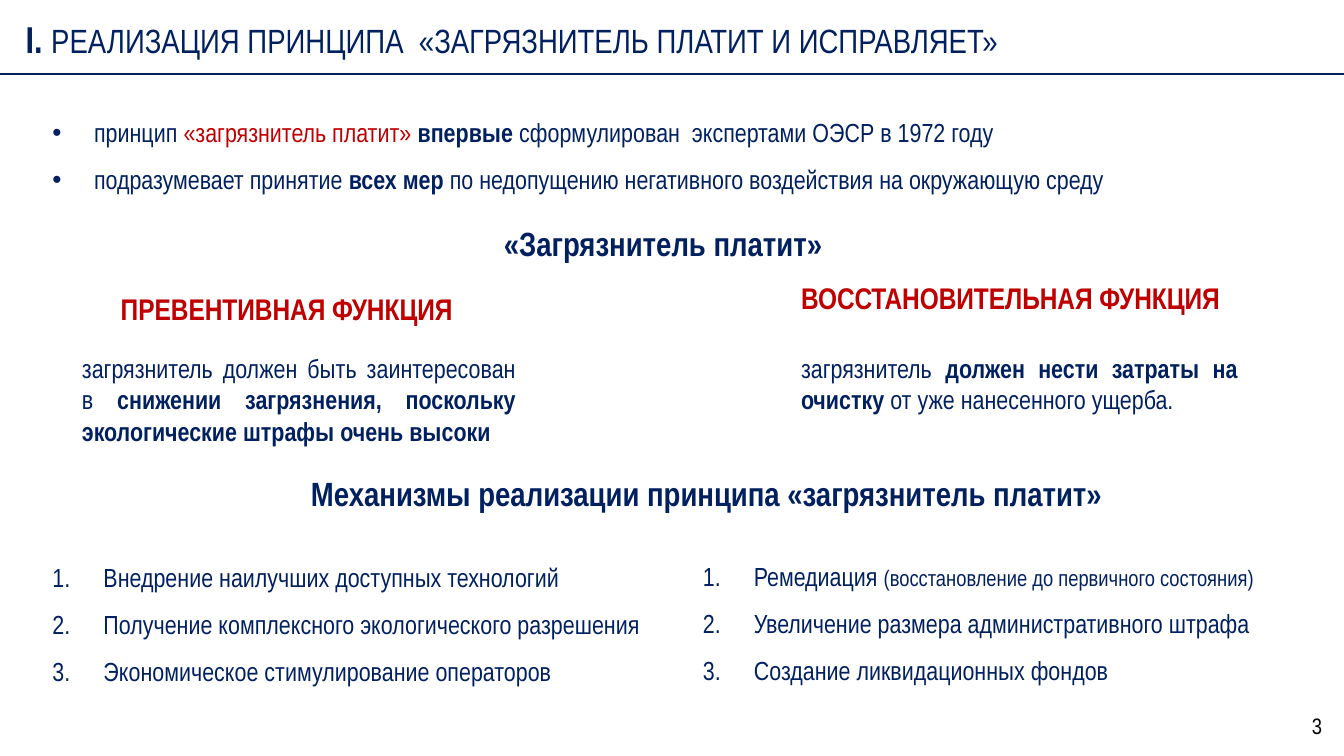
from dataclasses import dataclass

from lxml import etree
from pptx import Presentation
from pptx.dml.color import RGBColor
from pptx.enum.shapes import MSO_CONNECTOR
from pptx.enum.text import MSO_ANCHOR, MSO_AUTO_SIZE, PP_ALIGN
from pptx.oxml.ns import qn
from pptx.util import Inches, Pt

LEFT, MID, JUST = PP_ALIGN.LEFT, PP_ALIGN.CENTER, PP_ALIGN.JUSTIFY
TOP, MIDDLE = MSO_ANCHOR.TOP, MSO_ANCHOR.MIDDLE
GROW, FIXED = MSO_AUTO_SIZE.SHAPE_TO_FIT_TEXT, MSO_AUTO_SIZE.NONE
STRAIGHT = MSO_CONNECTOR.STRAIGHT
FONT, NAVY, RED = "Arial Narrow", "002060", "C00000"


@dataclass
class Span:
    text: str
    size: int = 14
    bold: bool = False
    color: str = NAVY


@dataclass
class Label:
    box: tuple
    spans: list
    align: PP_ALIGN = LEFT
    inset: tuple = (0.1, 0.05)
    wrap: bool = True


@dataclass
class Points:
    slot: int
    box: tuple
    rows: list
    indent: float
    mark: str
    value: dict


def paint(color: str) -> RGBColor:
    return RGBColor.from_string(color)


def place(shape, box: tuple) -> None:
    shape.left, shape.top, shape.width, shape.height = map(Inches, box)


def write(para, spans: list, align: PP_ALIGN) -> None:
    para.alignment = align
    for span in spans:
        run = para.add_run()
        run.text = span.text
        font = run.font
        font.name, font.size, font.bold = FONT, Pt(span.size), span.bold
        font.color.rgb = paint(span.color)


def add_label(slide, label: Label) -> None:
    frame = slide.shapes.add_textbox(*map(Inches, label.box)).text_frame
    frame.word_wrap, frame.auto_size = label.wrap, GROW
    side, edge = map(Inches, label.inset)
    frame.margin_left = frame.margin_right = side
    frame.margin_top = frame.margin_bottom = edge
    write(frame.paragraphs[0], label.spans, label.align)


def add_title(slide, box: tuple, spans: list) -> None:
    title = slide.shapes.title
    place(title, box)
    title.fill.solid()
    title.fill.fore_color.rgb = paint("FFFFFF")
    frame = title.text_frame
    frame.auto_size, frame.vertical_anchor = FIXED, MIDDLE
    write(frame.paragraphs[0], spans, LEFT)


def add_points(slide, points: Points) -> None:
    """Fill a body placeholder with a bulleted or numbered list."""
    body = slide.placeholders[points.slot]
    place(body, points.box)
    frame = body.text_frame
    frame.word_wrap, frame.auto_size = True, FIXED
    frame.vertical_anchor = TOP
    for i, spans in enumerate(points.rows):
        para = frame.add_paragraph() if i else frame.paragraphs[0]
        write(para, spans, LEFT)
        para.line_spacing, para.space_before = 1.5, Pt(0)
        props = para._p.get_or_add_pPr()
        props.set("marL", str(Inches(points.indent)))
        props.set("indent", str(-Inches(points.indent)))
        etree.SubElement(props, qn("a:buFont"), typeface="Arial")
        etree.SubElement(props, qn(points.mark), points.value)


def add_rule(slide, y: float) -> None:
    ends = map(Inches, (0, y, 10, y))
    rule = slide.shapes.add_connector(STRAIGHT, *ends)
    rule.line.color.rgb = paint(NAVY)
    rule.line.width = Pt(1.5)
    etree.SubElement(rule._element.spPr, qn("a:effectLst"))


TITLE = [
    Span("I. ", 20, True),
    Span("РЕАЛИЗАЦИЯ ПРИНЦИПА  «ЗАГРЯЗНИТЕЛЬ ПЛАТИТ И ИСПРАВЛЯЕТ»", 18),
]
DOT = ("a:buChar", {"char": "•"})
NUMBER = ("a:buAutoNum", {"type": "arabicPeriod"})
TIGHT = (0.07, 0.04)

LISTS = [
    Points(1, (0.29, 0.7, 8.15, 0.81), [
        [Span("принцип "), Span("«загрязнитель платит» ", color=RED),
         Span("впервые", bold=True),
         Span(" сформулирован  экспертами ОЭСР в 1972 году")],
        [Span("подразумевает принятие "), Span("всех мер ", bold=True),
         Span("по недопущению негативного воздействия на окружающую среду")],
    ], 0.31, *DOT),
    Points(2, (0.29, 4.01, 4.66, 1.4), [
        [Span("Внедрение наилучших доступных технологий")],
        [Span("Получение комплексного экологического разрешения")],
        [Span("Экономическое стимулирование операторов")],
    ], 0.38, *NUMBER),
    Points(4, (5.13, 4, 4.66, 1.4), [
        [Span("Ремедиация "),
         Span("(восстановление до первичного состояния)", 12)],
        [Span("Увеличение размера административного штрафа")],
        [Span("Создание ликвидационных фондов")],
    ], 0.38, *NUMBER),
]

LABELS = [
    Label((3.65, 1.61, 2.61, 0.4),
          [Span("«Загрязнитель платит»", 18, True)], wrap=False),
    Label((0.8, 2.11, 3.02, 0.31),
          [Span("ПРЕВЕНТИВНАЯ ФУНКЦИЯ", 16, True, RED)]),
    Label((5.76, 2.03, 3.52, 0.31),
          [Span("ВОССТАНОВИТЕЛЬНАЯ ФУНКЦИЯ", 16, True, RED)], MID),
    Label((0.54, 2.58, 3.37, 0.65), [
        Span("загрязнитель должен быть заинтересован в "),
        Span("снижении загрязнения, поскольку экологические штрафы "
             "очень высоки", bold=True),
    ], JUST, TIGHT),
    Label((5.89, 2.58, 3.39, 0.45), [
        Span("загрязнитель "),
        Span("должен нести затраты на очистку ", bold=True),
        Span("от уже нанесенного ущерба."),
    ], JUST, TIGHT),
    Label((1.86, 3.47, 6.8, 0.33),
          [Span("Механизмы реализации принципа «загрязнитель платит»",
                18, True)], MID),
    Label((9.51, 5.25, 0.58, 0.3), [Span("3", 12, color="000000")], MID),
]


def main() -> None:
    deck = Presentation()
    deck.slide_width = Inches(10)
    deck.slide_height = deck.slide_width * 9 // 16
    slide = deck.slides.add_slide(deck.slide_layouts[4])
    spare = slide.placeholders[3]._element
    spare.getparent().remove(spare)
    add_title(slide, (0.09, 0.1, 9.83, 0.38), TITLE)
    add_rule(slide, 0.55)
    for points in LISTS:
        add_points(slide, points)
    for label in LABELS:
        add_label(slide, label)
    deck.save("out.pptx")


if __name__ == "__main__":
    main()
